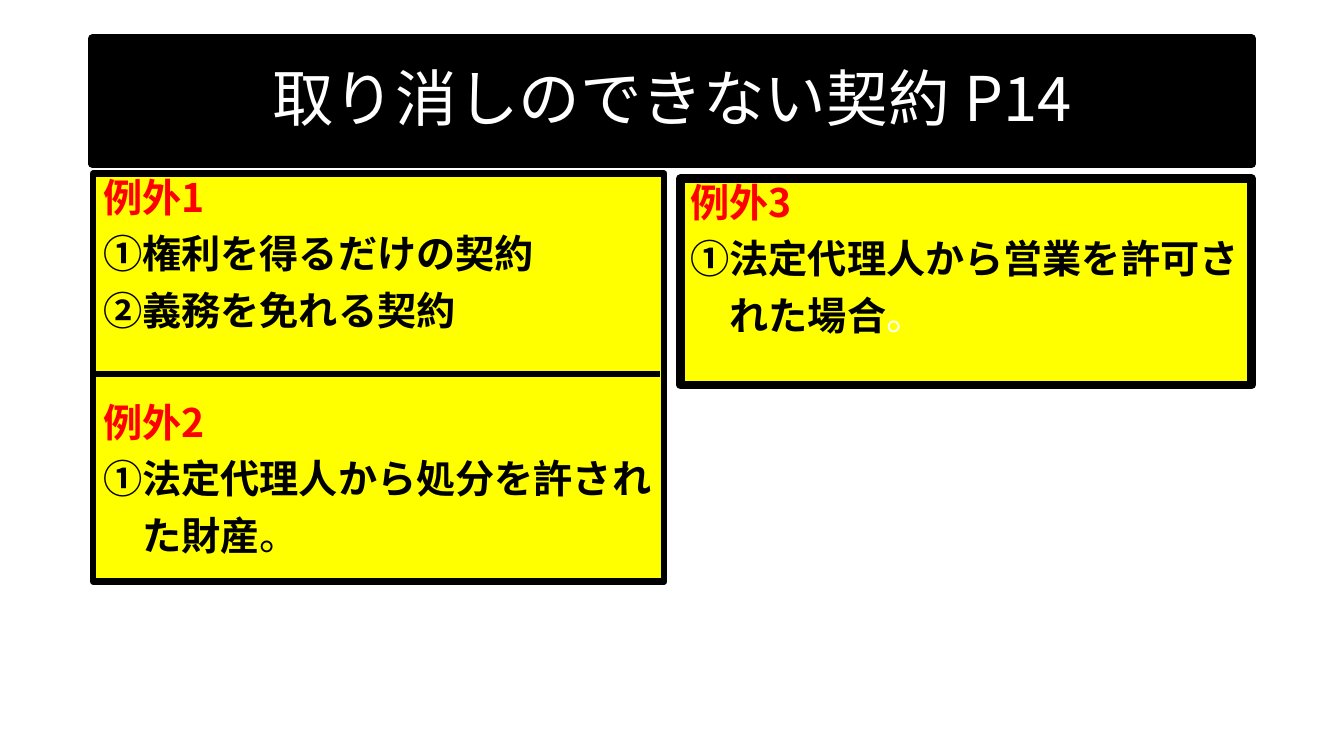
from lxml import etree
from pptx import Presentation
from pptx import util as u
from pptx.dml.color import RGBColor
from pptx.enum import shapes, text
from pptx.oxml import ns

BLACK, WHITE, YELLOW, RED = "000000", "FFFFFF", "FFFF00", "FF0000"


def colour(value):
    return RGBColor.from_string(value)


class Slide:
    font = "Noto Sans CJK JP"
    title_size = 44
    body_size = 28

    def __init__(self, page):
        self.page = page

    def frame(self, box, area, fill, border, anchor):
        box.left, box.top, box.width, box.height = map(u.Pt, area)
        box.fill.solid()
        box.fill.fore_color.rgb = colour(fill)
        box.line.color.rgb = colour(BLACK)
        box.line.width = u.Pt(border)
        box.text_frame.auto_size = text.MSO_AUTO_SIZE.NONE
        box.text_frame.word_wrap = True
        box.text_frame.vertical_anchor = anchor

    def style(self, span, size, fill, bold):
        span.font.size = u.Pt(size)
        span.font.bold = bold
        span.font.color.rgb = colour(fill)
        span.font.name = self.font
        latin = span.font._element.find(ns.qn("a:latin"))
        east_asian = etree.Element(ns.qn("a:ea"), typeface=self.font)
        latin.addnext(east_asian)

    def title(self, wording, area):
        box = self.page.shapes.title
        self.frame(box, area, BLACK, 6, text.MSO_ANCHOR.MIDDLE)
        box.text_frame.text = wording
        para = box.text_frame.paragraphs[0]
        para.alignment = text.PP_ALIGN.CENTER
        para.line_spacing = 0.9
        self.style(para.runs[0], self.title_size, WHITE, False)

    def body(self, index, area, border, lines):
        """Each line is (spans, indent, space before); a span is (wording, colour, bold)."""
        box = self.page.placeholders[index]
        self.frame(box, area, YELLOW, border, text.MSO_ANCHOR.TOP)
        frame = box.text_frame
        frame.text = "\n".join("".join(part[0] for part in spans) for spans, _, _ in lines)
        for para, (spans, indent, before) in zip(frame.paragraphs, lines):
            para.line_spacing = 0.9
            para.space_before = u.Pt(before)
            properties = para._p.get_or_add_pPr()
            properties.set("marL", str(u.Pt(indent)))
            properties.set("indent", "0")
            etree.SubElement(properties, ns.qn("a:buNone"))
            for number, (wording, fill, bold) in enumerate(spans):
                span = para.add_run() if number else para.runs[0]
                span.text = wording
                self.style(span, self.body_size, fill, bold)

    def rule(self, left, right, top, width):
        line = self.page.shapes.add_connector(
            shapes.MSO_CONNECTOR.STRAIGHT, u.Pt(left), u.Pt(top), u.Pt(right), u.Pt(top))
        line.line.color.rgb = colour(BLACK)
        line.line.width = u.Pt(width)
        etree.SubElement(line._element.spPr, ns.qn("a:effectLst"))


def heading(wording, before=10):
    return [(wording, RED, True)], 0, before


def item(wording):
    return [(wording, BLACK, True)], 0, 10


def continuation(wording, stop_colour):
    spans = [(wording, BLACK, True), ("。", stop_colour, False)]
    return spans, Slide.body_size, 10


def main():
    deck = Presentation()
    deck.slide_width, deck.slide_height = u.Pt(960), u.Pt(540)
    slide = Slide(deck.slides.add_slide(deck.slide_layouts[3]))

    # Title band
    slide.title("取り消しのできない契約 P14", (66, 27.5, 828, 89.5))

    # Left box: exceptions 1 and 2
    slide.body(1, (66.5, 124, 408, 291.5), 4.5, [
        heading("例外1"),
        item("①権利を得るだけの契約"),
        item("②義務を免れる契約"),
        heading("例外2", before=50),
        item("①法定代理人から処分を許され"),
        continuation("た財産", BLACK),
    ])

    # Right box: exception 3
    slide.body(2, (486, 127.5, 408, 147.5), 6, [
        heading("例外3"),
        item("①法定代理人から営業を許可さ"),
        continuation("れた場合", WHITE),
    ])

    # Divider between exceptions 1 and 2
    slide.rule(68.5, 471.5, 267, 4.5)

    deck.save("out.pptx")


if __name__ == "__main__":
    main()
